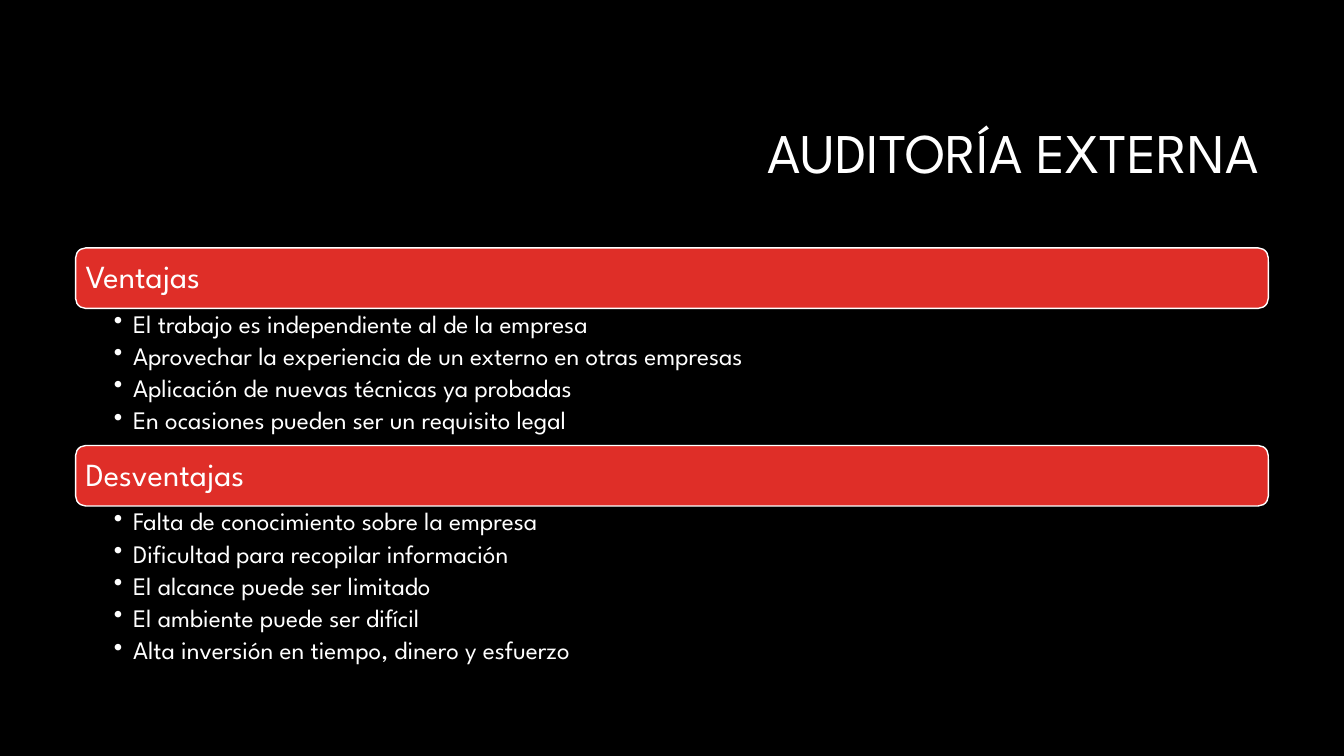
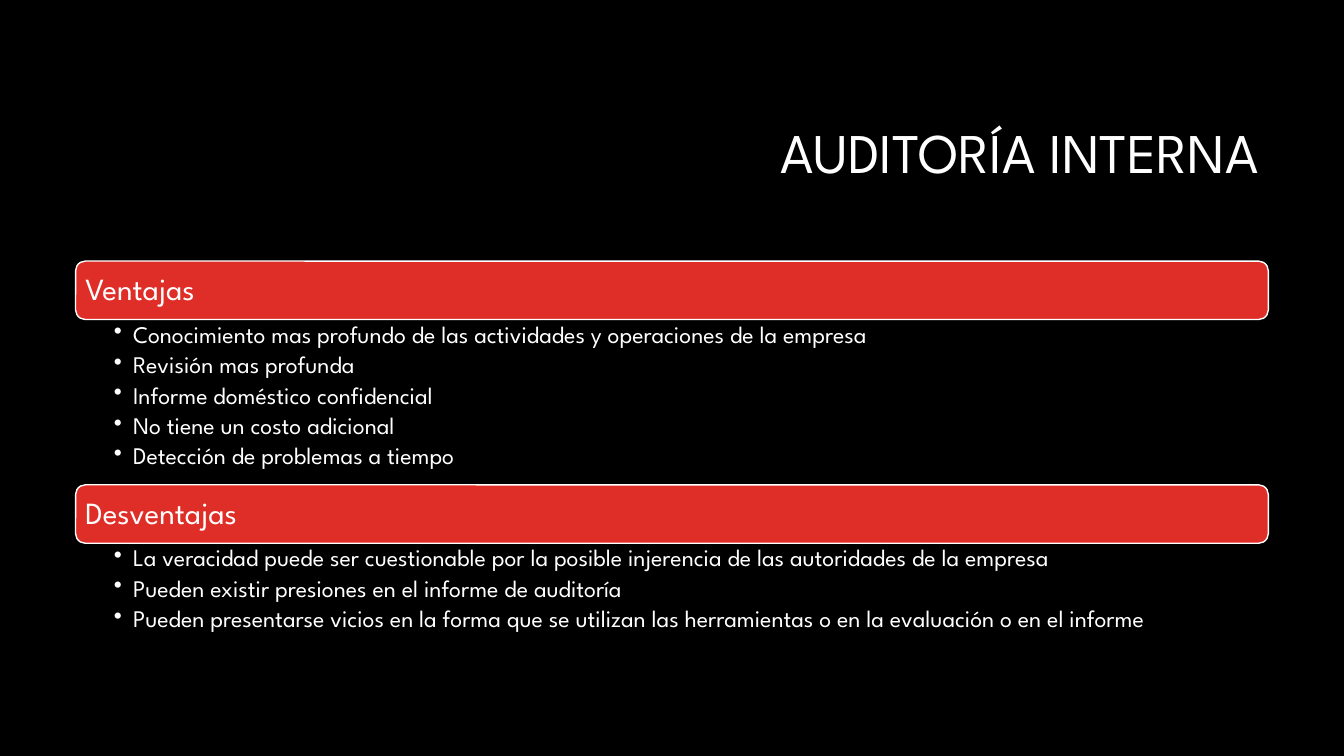
from lxml import etree
from pptx import Presentation
from pptx.dml.color import RGBColor
from pptx.enum.shapes import MSO_SHAPE as Preset
from pptx.enum.text import MSO_ANCHOR as Anchor, PP_ALIGN as Align
from pptx.oxml.ns import qn
from pptx.util import Inches, Pt

WIDTH, HEIGHT = 13.33, 7.5
MARGIN = 0.75
CONTENT_WIDTH = WIDTH - 2 * MARGIN
STACK_CENTER = 4.6
FONT = "League Spartan"
BLACK, WHITE, RED = "000000", "FFFFFF", "DF2E28"

SLIDES = [
    {
        "title": "AUDITORÍA EXTERNA",
        "heading_size": 23,
        "item_size": 18,
        "band_height": 0.6,
        "sections": [
            ("Ventajas", 1.36, [
                "El trabajo es independiente al de la empresa",
                "Aprovechar la experiencia de un externo en otras empresas",
                "Aplicación de nuevas técnicas ya probadas",
                "En ocasiones pueden ser un requisito legal",
            ]),
            ("Desventajas", 1.72, [
                "Falta de conocimiento sobre la empresa",
                "Dificultad para recopilar información",
                "El alcance puede ser limitado",
                "El ambiente puede ser difícil",
                "Alta inversión en tiempo, dinero y esfuerzo",
            ]),
        ],
    },
    {
        "title": "AUDITORÍA INTERNA",
        "heading_size": 22,
        "item_size": 17,
        "band_height": 0.58,
        "sections": [
            ("Ventajas", 1.64, [
                "Conocimiento mas profundo de las actividades y operaciones de la empresa",
                "Revisión mas profunda",
                "Informe doméstico confidencial",
                "No tiene un costo adicional",
                "Detección de problemas a tiempo",
            ]),
            ("Desventajas", 1.22, [
                "La veracidad puede ser cuestionable por la posible injerencia de las autoridades de la empresa",
                "Pueden existir presiones en el informe de auditoría",
                "Pueden presentarse vicios en la forma que se utilizan las herramientas o en la evaluación o en el informe",
            ]),
        ],
    },
]


def color(value):
    return RGBColor.from_string(value)


def set_frame(shape, anchor, left, top, right, bottom):
    frame = shape.text_frame
    frame.word_wrap = True
    frame.vertical_anchor = anchor
    frame.margin_left, frame.margin_top = Inches(left), Inches(top)
    frame.margin_right, frame.margin_bottom = Inches(right), Inches(bottom)
    return frame


def format_paragraph(paragraph, size, align=Align.LEFT):
    paragraph.alignment = align
    paragraph.line_spacing = 0.9
    for run in paragraph.runs:
        run.font.name = FONT
        run.font.size = Pt(size)
        run.font.color.rgb = color(WHITE)


def add_bullet(paragraph, indent):
    properties = paragraph._p.get_or_add_pPr()
    properties.set("marL", str(Inches(indent)))
    properties.set("indent", str(-Inches(indent)))
    etree.SubElement(properties, qn("a:buChar")).set("char", "•")


def add_title(slide, text):
    left = 3.17
    box = slide.shapes.add_textbox(
        Inches(left), Inches(0.84), Inches(WIDTH - MARGIN - left), Inches(1.41))
    frame = set_frame(box, Anchor.MIDDLE, 0.1, 0.05, 0.1, 0.05)
    frame.text = text
    format_paragraph(frame.paragraphs[0], 40, Align.RIGHT)


def add_band(slide, text, top, height, size):
    band = slide.shapes.add_shape(
        Preset.ROUNDED_RECTANGLE, Inches(MARGIN), Inches(top),
        Inches(CONTENT_WIDTH), Inches(height))
    band.shadow.inherit = False
    band.fill.solid()
    band.fill.fore_color.rgb = color(RED)
    band.line.color.rgb = color(WHITE)
    band.line.width = Pt(1)
    frame = set_frame(band, Anchor.MIDDLE, 0.07, 0.07, 0.07, 0.07)
    frame.text = text
    format_paragraph(frame.paragraphs[0], size)


def add_list(slide, items, top, height, size):
    box = slide.shapes.add_textbox(
        Inches(MARGIN), Inches(top), Inches(CONTENT_WIDTH), Inches(height))
    frame = set_frame(box, Anchor.TOP, 0.38, 0.03, 0.18, 0.03)
    frame.text = "\n".join(items)
    for paragraph in frame.paragraphs:
        add_bullet(paragraph, 0.19)
        format_paragraph(paragraph, size)
        paragraph.space_after = Pt(0.2 * size)


def add_sections(slide, content):
    band_height = content["band_height"]
    total = sum(band_height + height for _, height, _ in content["sections"])
    top = STACK_CENTER - total / 2
    for heading, height, items in content["sections"]:
        add_band(slide, heading, top, band_height, content["heading_size"])
        add_list(slide, items, top + band_height, height, content["item_size"])
        top += band_height + height


def main():
    presentation = Presentation()
    presentation.slide_width = Inches(WIDTH)
    presentation.slide_height = Inches(HEIGHT)
    background = presentation.slide_master.background.fill
    background.solid()
    background.fore_color.rgb = color(BLACK)
    for content in SLIDES:
        slide = presentation.slides.add_slide(presentation.slide_layouts[6])
        add_title(slide, content["title"])
        add_sections(slide, content)
    presentation.save("out.pptx")


if __name__ == "__main__":
    main()
